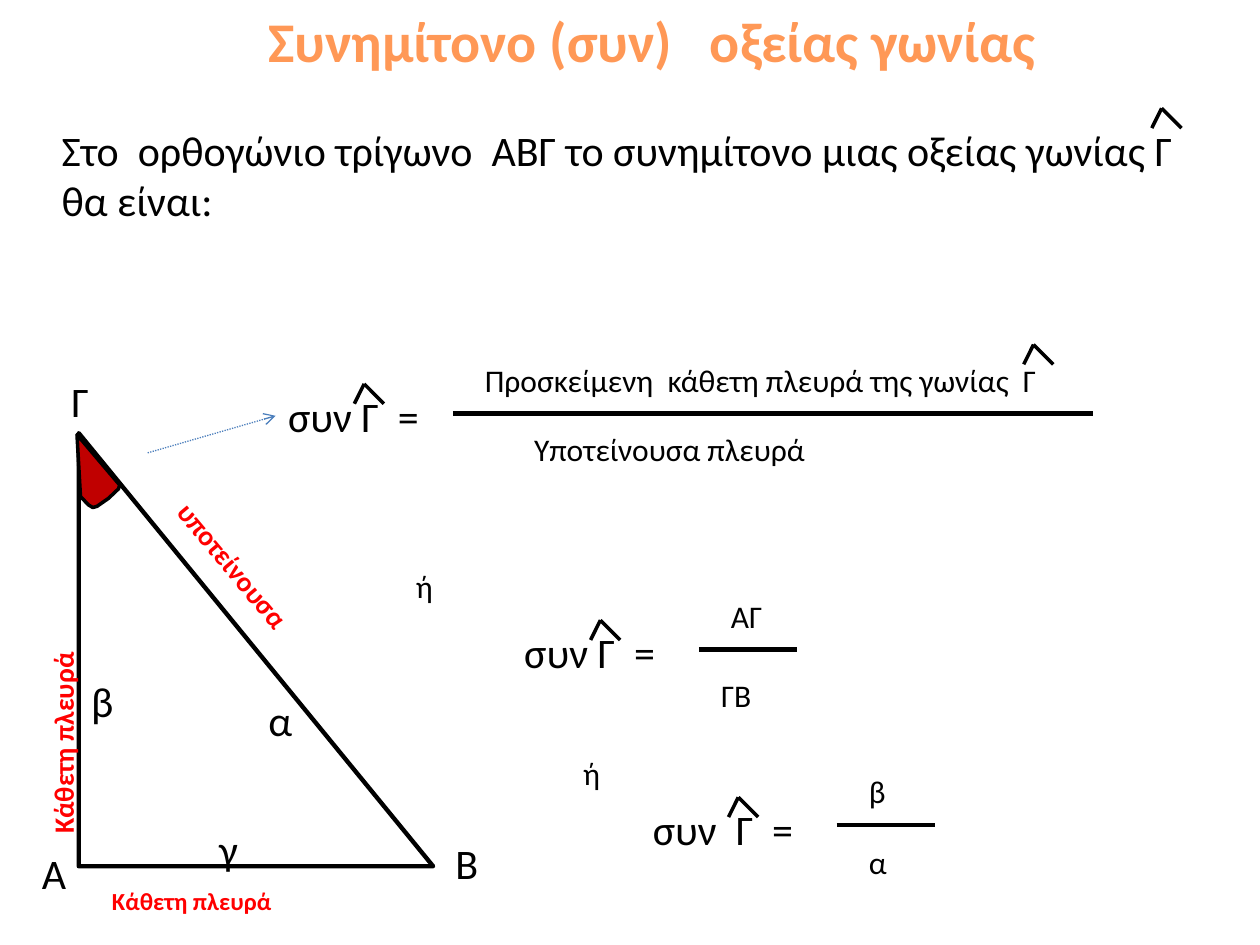
import pptx
import pptx.dml.color
import pptx.enum.dml
import pptx.enum.shapes
import pptx.enum.text
import pptx.oxml
import pptx.oxml.ns
import pptx.util
from pptx.util import Pt

BLACK = "000000"
RED = "FF0000"
DARK_RED = "C00000"
ORANGE = "FF9856"
BLUE = "4B7EBC"


def rgb(hex_colour):
    return pptx.dml.color.RGBColor.from_string(hex_colour)


class SlideWriter:
    font = "Calibri"
    letter_size = 24
    term_size = 18

    def __init__(self, slide):
        self.slide = slide

    def text(self, words, left, top, width, height, size=letter_size,
             colour=BLACK, bold=False, rotation=0):
        box = self.slide.shapes.add_textbox(Pt(left), Pt(top), Pt(width), Pt(height))
        box.rotation = rotation
        frame = box.text_frame
        frame.word_wrap = True
        frame.auto_size = pptx.enum.text.MSO_AUTO_SIZE.SHAPE_TO_FIT_TEXT
        run = frame.paragraphs[0].add_run()
        run.text = words
        run.font.name = self.font
        run.font.size = Pt(size)
        run.font.bold = bold
        run.font.color.rgb = rgb(colour)

    def line(self, start, end, width=2.5, colour=BLACK, shapes=None):
        shapes = shapes or self.slide.shapes
        stroke = shapes.add_connector(
            pptx.enum.shapes.MSO_CONNECTOR.STRAIGHT,
            Pt(start[0]), Pt(start[1]), Pt(end[0]), Pt(end[1]))
        self.outline(stroke, width, colour)
        properties = stroke._element.spPr
        properties.append(pptx.oxml.parse_xml(
            f"<a:effectLst {pptx.oxml.ns.nsdecls('a')}/>"))
        return stroke

    def dotted_arrow(self, start, end):
        arrow = self.line(start, end, 0.75, BLUE)
        arrow.line.dash_style = pptx.enum.dml.MSO_LINE.ROUND_DOT
        arrow.line._get_or_add_ln().append(pptx.oxml.parse_xml(
            f"<a:tailEnd {pptx.oxml.ns.nsdecls('a')} type='arrow'/>"))

    def outline(self, shape, width, colour):
        shape.line.width = Pt(width)
        shape.line.color.rgb = rgb(colour)

    def triangle(self, left, top, width, height):
        """Draw an unfilled triangle with its apex above the left corner."""
        shape = self.slide.shapes.add_shape(
            pptx.enum.shapes.MSO_SHAPE.ISOSCELES_TRIANGLE,
            Pt(left), Pt(top), Pt(width), Pt(height))
        shape.adjustments[0] = 0
        shape.shadow.inherit = False
        shape.fill.background()
        self.outline(shape, 2.5, BLACK)

    def angle_mark(self, corners):
        start, *others = [(Pt(x), Pt(y)) for x, y in corners]
        builder = self.slide.shapes.build_freeform(*start)
        builder.add_line_segments(others, close=True)
        mark = builder.convert_to_shape()
        mark.shadow.inherit = False
        mark.fill.solid()
        mark.fill.fore_color.rgb = rgb(DARK_RED)
        self.outline(mark, 2, BLACK)

    def hat(self, x, y):
        """Draw the angle sign whose peak is at x, y."""
        sign = self.slide.shapes.add_group_shape()
        for reach in (-5.6, 11.3):
            self.line((x, y), (x + reach, y + 11.3), 2, shapes=sign.shapes)

    def fraction(self, numerator, denominator, bar):
        """Each term is (words, left, top, width); bar is (left, right, y)."""
        left, right, y = bar
        self.line((left, y), (right, y))
        for words, term_left, top, width in (numerator, denominator):
            self.text(words, term_left, top, width, 29, self.term_size)


def main():
    deck = pptx.Presentation()
    deck.slide_width, deck.slide_height = Pt(720), Pt(540)
    writer = SlideWriter(deck.slides.add_slide(deck.slide_layouts[6]))

    writer.triangle(45, 247.5, 202.5, 247.5)
    for letter, left, top in (
            ("Α", 16.9, 481), ("Γ", 33.8, 211), ("Β", 253.1, 475.3),
            ("α", 146.3, 393.4), ("β", 45, 382.3), ("γ", 118.1, 466.8)):
        writer.text(letter, left, top, 39 if letter.isupper() else 27.5, 36.4)

    for side, left, top, size, rotation in (
            ("Κάθετη πλευρά", -82.1, 352.1, 16, 270),
            ("Κάθετη πλευρά", 56.9, 502.6, 14, 0),
            ("υποτείνουσα", 58.3, 361.4, 16, 50)):
        writer.text(side, left, top, 236.2, 26.6, size, RED, True, rotation)

    for ratio, left, top, width in (
            ("συν Γ  =", 157.5, 219.4, 90),
            ("συν Γ  =", 292.5, 354.4, 124),
            ("συν  Γ  =", 366, 455.6, 112.5)):
        writer.text(ratio, left, top, width, 36.4)

    writer.fraction(("Προσκείμενη  κάθετη πλευρά της γωνίας  Γ", 270, 202.5, 348.8),
                    ("Υποτείνουσα πλευρά", 298.1, 241.9, 337.5),
                    (258.8, 624.4, 236.2))
    writer.fraction(("ΑΓ", 410.6, 337.5, 50.6), ("ΓΒ", 405, 382.5, 45),
                    (399.4, 455.6, 371.2))
    writer.fraction(("β", 489.4, 437.6, 50.6), ("α", 489.4, 478.1, 45),
                    (478.1, 534.4, 471.6))
    for left, top in ((230.6, 320.6), (326.2, 427.5)):
        writer.text("ή", left, top, 45, 29, writer.term_size)

    for peak in ((663.8, 61.9), (590.6, 196.9), (208.1, 219.4),
                 (343.1, 354.4), (421.9, 455.6)):
        writer.hat(*peak)

    writer.dotted_arrow((84.4, 258.8), (157.5, 237.6))
    writer.angle_mark([(44, 248.4), (46, 283.7), (50.5, 288.5), (53, 290),
                       (55.4, 289.4), (62, 284.8), (67.7, 279.4), (68.4, 277.2)])

    writer.text("Στο  ορθογώνιο τρίγωνο  ΑΒΓ το συνημίτονο μιας οξείας γωνίας Γ  "
                "θα είναι:", 28.1, 67.5, 658.1, 65.4)
    writer.text("Συνημίτονο (συν)   οξείας γωνίας", 146.2, 0, 495, 46, 32, ORANGE, True)

    deck.save("out.pptx")


if __name__ == "__main__":
    main()
